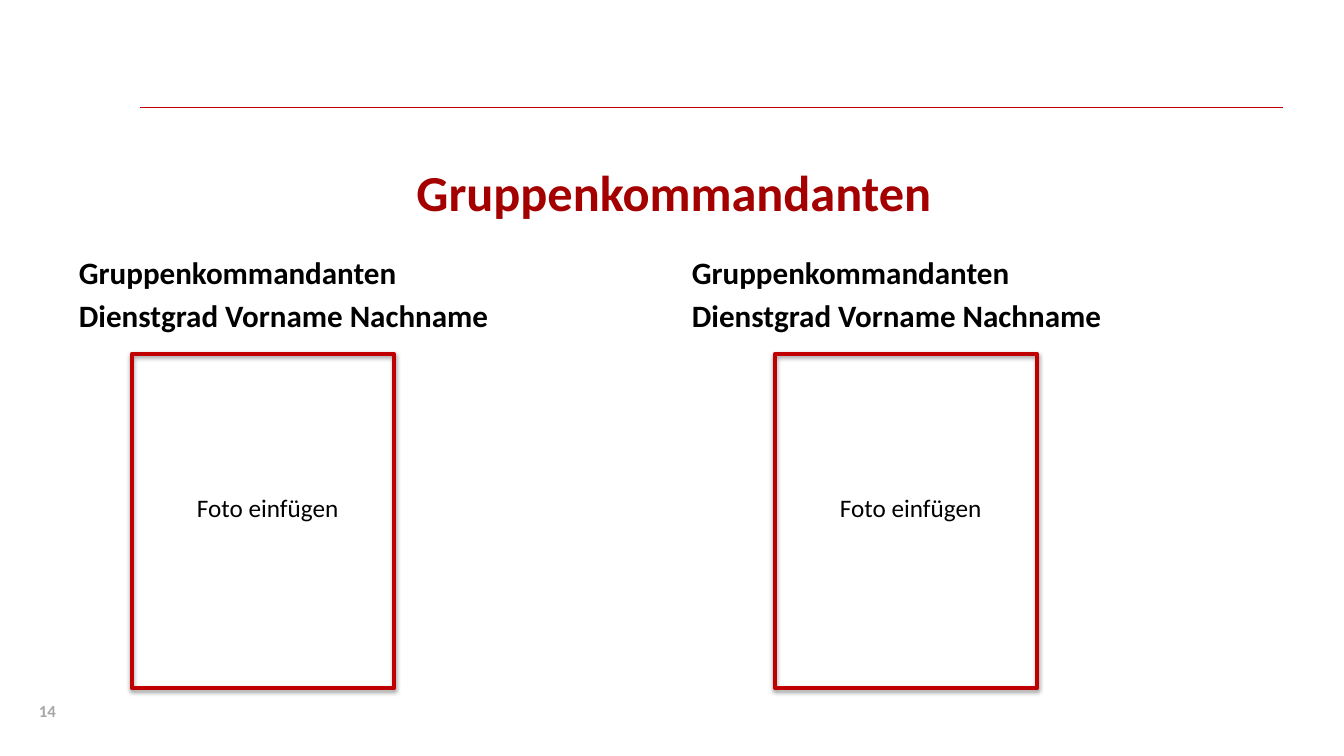
from lxml import etree
from pptx import Presentation
from pptx.dml.color import RGBColor
from pptx.enum.shapes import MSO_CONNECTOR as Connector, MSO_SHAPE as Shape
from pptx.enum.text import MSO_ANCHOR as Anchor, MSO_AUTO_SIZE as AutoSize, PP_ALIGN as Align
from pptx.oxml import parse_xml
from pptx.oxml.ns import nsdecls, qn
from pptx.util import Pt

PX = 914400 / 100.8
RED = RGBColor(0xC0, 0x00, 0x00)
DARK_RED = RGBColor(0xA4, 0x00, 0x00)
BLACK = RGBColor(0x00, 0x00, 0x00)
GREY = RGBColor(0xA6, 0xA6, 0xA6)

TITLE = {"name": "Calibri", "size": Pt(36), "bold": True}
HEADING = {"name": "Calibri", "size": Pt(22.2), "bold": True}
LABEL = {"name": "Calibri", "size": Pt(18), "bold": False}
NUMBER = {"name": "Calibri", "size": Pt(12), "bold": True}

COMMANDERS = [(69, 132), (682, 775)]
SHADOW = (
    f'<a:effectLst {nsdecls("a")}>'
    '<a:outerShdw blurRad="40000" dist="20000" dir="5400000" rotWithShape="0">'
    '<a:srgbClr val="000000"><a:alpha val="38000"/></a:srgbClr>'
    '</a:outerShdw></a:effectLst>'
)


def emu(*lengths):
    """Turn pixel lengths into EMU."""
    return [round(length * PX) for length in lengths]


def add_text(page, area, lines, style, color, align=Align.LEFT,
             anchor=Anchor.TOP, wrap=True, grow=False):
    """Add a text box with one paragraph per line."""
    frame = page.shapes.add_textbox(*emu(*area)).text_frame
    frame.word_wrap = wrap
    frame.auto_size = AutoSize.SHAPE_TO_FIT_TEXT if grow else AutoSize.NONE
    frame.vertical_anchor = anchor
    for index, line in enumerate(lines):
        para = frame.add_paragraph() if index else frame.paragraphs[0]
        para.alignment = align
        if index:
            para.space_before = Pt(4.4)
        span = para.add_run()
        span.text = line
        for key, value in style.items():
            setattr(span.font, key, value)
        span.font.color.rgb = color


def add_rule(page, left, right, top):
    """Add the thin red line at the head of the page."""
    rule = page.shapes.add_connector(Connector.STRAIGHT, *emu(left, top, right, top))
    rule.line.color.rgb = RED
    rule.line.width = Pt(0.75)
    etree.SubElement(rule._element.spPr, qn("a:effectLst"))


def add_photo_frame(page, left, top, width, height):
    """Add a red photo frame with a soft shadow."""
    box = page.shapes.add_shape(Shape.RECTANGLE, *emu(left, top, width, height))
    box.fill.background()
    box.line.color.rgb = RED
    box.line.width = Pt(3)
    box._element.spPr.append(parse_xml(SHADOW))


def add_commander(page, heading_left, photo_left):
    """Add one commander's heading and photo area."""
    add_text(page, (heading_left, 259, 594, 80),
             ["Gruppenkommandanten", "Dienstgrad Vorname Nachname"],
             HEADING, BLACK, anchor=Anchor.BOTTOM)
    add_text(page, (photo_left + 55, 487, 163, 40), ["Foto einfügen"],
             LABEL, BLACK, wrap=False, grow=True)
    add_photo_frame(page, photo_left, 354, 262, 334)


def main():
    """Build the slide and save it."""
    deck = Presentation()
    deck.slide_width, deck.slide_height = emu(1344, 756)
    page = deck.slides.add_slide(deck.slide_layouts[6])
    add_rule(page, 140, 1283, 108)
    add_text(page, (29, 696, 262, 30), ["14"], NUMBER, GREY, grow=True)
    add_text(page, (69, 140, 1210, 103), ["Gruppenkommandanten"],
             TITLE, DARK_RED, Align.CENTER, Anchor.MIDDLE)
    for heading_left, photo_left in COMMANDERS:
        add_commander(page, heading_left, photo_left)
    deck.save("out.pptx")


if __name__ == "__main__":
    main()
